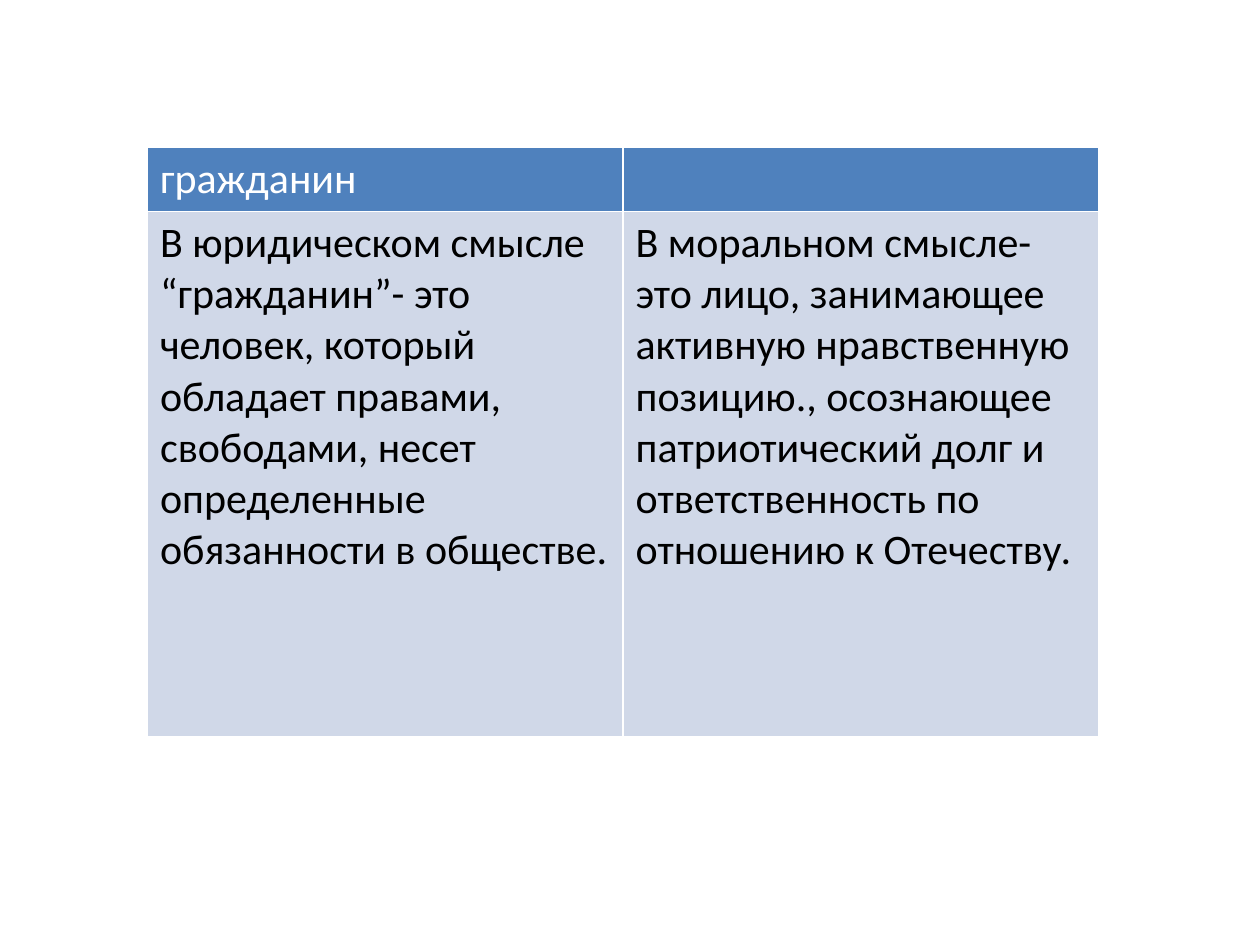
from lxml import etree
from pptx import Presentation
from pptx.dml.color import RGBColor
from pptx.oxml.ns import qn
from pptx.util import Inches, Pt

FONT = "Calibri"
COLORS = {
    "header": "4F81BD",
    "body": "D0D8E8",
    "border": "FFFFFF",
    "header_text": "FFFFFF",
    "body_text": "000000",
}
ROWS = [
    ("гражданин", ""),
    (
        "В юридическом смысле “гражданин”- это человек, который обладает "
        "правами, свободами, несет определенные обязанности в обществе.",
        "В моральном смысле- это лицо, занимающее активную нравственную "
        "позицию., осознающее патриотический долг и ответственность по "
        "отношению к Отечеству.",
    ),
]
ROW_HEIGHTS = (0.5, 4.17)


def write_text(text_frame, text, *, size, color):
    paragraph = text_frame.paragraphs[0]
    font = paragraph.font
    if text:
        run = paragraph.add_run()
        run.text = text
        font = run.font
    font.name = FONT
    font.size = Pt(size)
    font.bold = False
    font.color.rgb = RGBColor.from_string(color)


def set_borders(cell, color, width):
    properties = cell._tc.get_or_add_tcPr()
    # Border lines must come before the fill
    for index, side in enumerate(("lnL", "lnR", "lnT", "lnB")):
        line = etree.Element(qn(f"a:{side}"), w=str(Pt(width)))
        fill = etree.SubElement(line, qn("a:solidFill"))
        etree.SubElement(fill, qn("a:srgbClr"), val=color)
        properties.insert(index, line)


def add_definition_table(slide, left, top, width):
    height = Inches(sum(ROW_HEIGHTS))
    columns = len(ROWS[0])
    table = slide.shapes.add_table(
        len(ROWS), columns, left, top, width, height
    ).table
    for column in table.columns:
        column.width = width // columns
    for row_index, texts in enumerate(ROWS):
        table.rows[row_index].height = Inches(ROW_HEIGHTS[row_index])
        style = "body" if row_index else "header"
        for column_index, text in enumerate(texts):
            cell = table.cell(row_index, column_index)
            cell.fill.solid()
            cell.fill.fore_color.rgb = RGBColor.from_string(COLORS[style])
            set_borders(cell, COLORS["border"], 1)
            write_text(cell.text_frame, text, size=24,
                       color=COLORS[f"{style}_text"])


def main():
    presentation = Presentation()
    presentation.slide_width = Inches(10)
    presentation.slide_height = Inches(7.5)
    slide = presentation.slides.add_slide(presentation.slide_layouts[6])

    # Two meanings of the term, side by side
    add_definition_table(slide, Inches(1.17), Inches(1.17), Inches(7.55))
    presentation.save("out.pptx")


if __name__ == "__main__":
    main()
